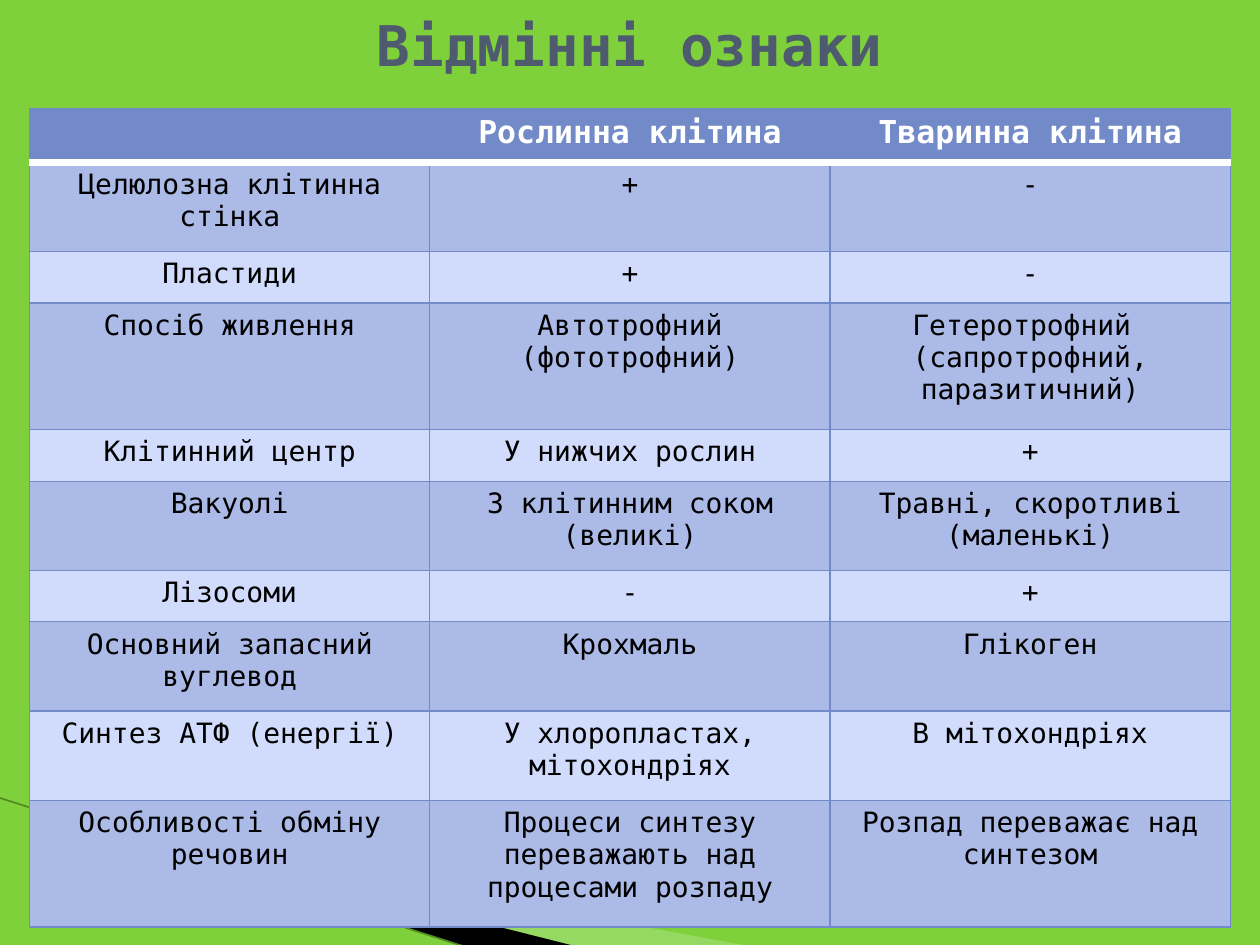
from dataclasses import dataclass

from lxml.etree import SubElement
from pptx import Presentation
from pptx.dml.color import RGBColor
from pptx.enum.shapes import MSO_CONNECTOR
from pptx.enum.text import MSO_ANCHOR, PP_ALIGN
from pptx.oxml.ns import qn
from pptx.util import Inches, Pt


@dataclass(frozen=True)
class Theme:
    """Colours, font and type sizes of the slide."""
    font: str = "DejaVu Sans Mono"
    background: str = "7FD13B"
    title: str = "4E5B6F"
    header: str = "738AC8"
    band: str = "ABBAE7"
    plain: str = "D1DCFC"
    white: str = "FFFFFF"
    black: str = "000000"
    light_wedge: str = "B8E7A1"
    streak: str = "4F8A1E"
    title_size: int = 32
    header_size: int = 18
    body_size: int = 16


THEME = Theme()
TITLE = "Відмінні ознаки"
ROWS = [
    (0.43, "", "Рослинна клітина", "Тваринна клітина"),
    (0.71, "Целюлозна клітинна стінка", "+", "-"),
    (0.41, "Пластиди", "+", "-"),
    (1.01, "Спосіб живлення", "Автотрофний (фототрофний)",
     "Гетеротрофний \n(сапротрофний, паразитичний)"),
    (0.41, "Клітинний центр", "У нижчих рослин", "+"),
    (0.71, "Вакуолі", "З клітинним соком (великі)", "Травні, скоротливі (маленькі)"),
    (0.41, "Лізосоми", "-", "+"),
    (0.71, "Основний запасний вуглевод", "Крохмаль", "Глікоген"),
    (0.71, "Синтез АТФ (енергії)", "У хлоропластах, мітохондріях", "В мітохондріях"),
    (1.01, "Особливості обміну речовин",
     "Процеси синтезу переважають над процесами розпаду",
     "Розпад переважає над синтезом"),
]


def rgb(color):
    """Turn a hex string into a colour."""
    return RGBColor.from_string(color)


def write_text(tf, text, size, color, bold=False, align=PP_ALIGN.CENTER):
    """Write one paragraph for each line of text."""
    for i, line in enumerate(text.split("\n")):
        p = tf.add_paragraph() if i else tf.paragraphs[0]
        p.alignment = align
        r = p.add_run()
        r.text = line
        r.font.name = THEME.font
        r.font.size = Pt(size)
        r.font.bold = bold
        r.font.color.rgb = rgb(color)


def set_frame(sp, box):
    """Change the frame of a freeform while its outline stays in place."""
    left, top, width, height = map(Inches, box)
    outline = sp._element.spPr.find(".//" + qn("a:path"))
    for pt in outline.iter(qn("a:pt")):
        pt.set("x", str(int(pt.get("x")) + sp.left - left))
        pt.set("y", str(int(pt.get("y")) + sp.top - top))
    outline.set("w", str(width))
    outline.set("h", str(height))
    sp.left, sp.top, sp.width, sp.height = left, top, width, height


def add_wedge(s, box, points, color, alpha=100):
    """Draw a filled outline through points measured from the frame corner."""
    left, top = box[:2]
    points = [(Inches(left + x), Inches(top + y)) for x, y in points]
    builder = s.shapes.build_freeform(*points[0])
    builder.add_line_segments(points[1:], close=True)
    sp = builder.convert_to_shape()
    set_frame(sp, box)
    sp.shadow.inherit = False
    sp.fill.solid()
    sp.fill.fore_color.rgb = rgb(color)
    sp.line.fill.background()
    if alpha < 100:
        fill = sp._element.spPr.find(qn("a:solidFill"))
        SubElement(fill[0], qn("a:alpha"), val=str(alpha * 1000))


def add_decoration(s, box):
    """Draw the wedges and the streak along the bottom edge."""
    left, top, width, height = box
    add_wedge(s, (left + 0.79, top - 0.86, 4.16, 1.58),
              [(-0.23, 1.04), (5.17, 2.04), (3.78, 2.04), (-0.23, 1.03)],
              THEME.light_wedge, alpha=40)
    add_wedge(s, (left - 0.05, top, 4.16, 0.92),
              [(0.59, 0.16), (4.63, 1.18), (3.78, 1.19), (0.6, 0.17)], THEME.black)
    line = s.shapes.add_connector(
        MSO_CONNECTOR.STRAIGHT, Inches(left), Inches(top),
        Inches(left + width), Inches(top + height))
    line.line.color.rgb = rgb(THEME.streak)
    line.line.width = Pt(0.95)
    SubElement(line._element.spPr, qn("a:effectLst"))


def add_title(s, box):
    """Place the centred title."""
    tf = s.shapes.add_textbox(*map(Inches, box)).text_frame
    tf.word_wrap = True
    tf.vertical_anchor = MSO_ANCHOR.MIDDLE
    write_text(tf, TITLE, THEME.title_size, THEME.title, bold=True)


def set_border(cell, side, color, width):
    """Give one side of a cell a solid border."""
    ln = SubElement(cell._tc.get_or_add_tcPr(), qn(f"a:ln{side}"), w=str(Pt(width)))
    SubElement(SubElement(ln, qn("a:solidFill")), qn("a:srgbClr"), val=color)


def style_cell(cell, row):
    """Set the borders and the banded fill of a cell."""
    for side in "LRTB":
        under_header = (row, side) in ((0, "B"), (1, "T"))
        color, width = (THEME.white, 4.33) if under_header else (THEME.header, 0.75)
        set_border(cell, side, color, width)
    cell.fill.solid()
    fill = THEME.band if row % 2 else THEME.plain
    cell.fill.fore_color.rgb = rgb(fill if row else THEME.header)


def add_comparison(s, box):
    """Place the table that compares plant and animal cells."""
    columns = len(ROWS[0]) - 1
    table = s.shapes.add_table(len(ROWS), columns, *map(Inches, box)).table
    for column in table.columns:
        column.width = Inches(box[2] / columns)
    scale = box[3] / sum(row[0] for row in ROWS)
    for i, (height, *texts) in enumerate(ROWS):
        table.rows[i].height = Inches(height * scale)
        size = THEME.body_size if i else THEME.header_size
        color = THEME.black if i else THEME.white
        for j, text in enumerate(texts):
            cell = table.cell(i, j)
            style_cell(cell, i)
            if text:
                write_text(cell.text_frame, text, size, color, bold=not i)


def main():
    """Build and save the slide."""
    prs = Presentation()
    prs.slide_width, prs.slide_height = Inches(10), Inches(7.5)
    s = prs.slides.add_slide(prs.slide_layouts[6])
    s.background.fill.solid()
    s.background.fill.fore_color.rgb = rgb(THEME.background)
    add_decoration(s, (-0.01, 6.33, 3.72, 1.19))
    add_comparison(s, (0.235, 0.86, 9.53, 6.5))
    add_title(s, (0.5, 0, 9, 0.7))
    prs.save("out.pptx")


if __name__ == "__main__":
    main()
